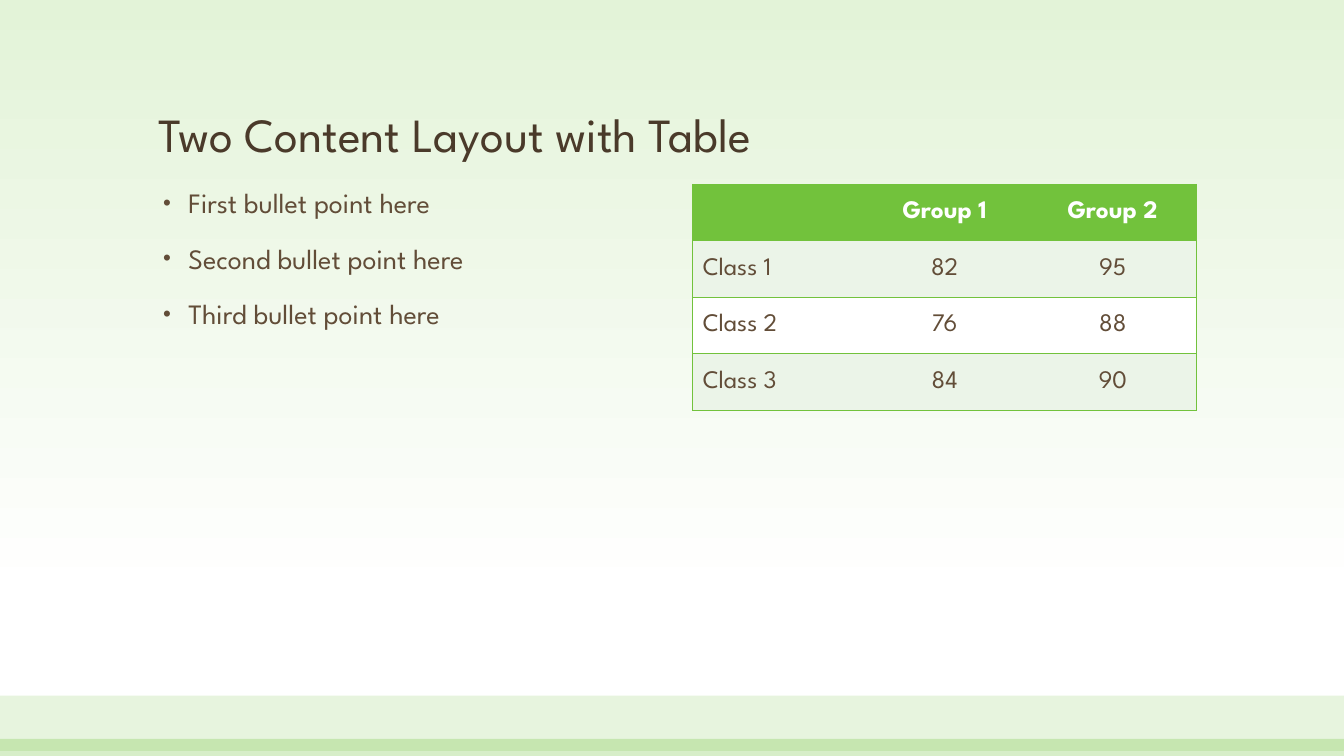
from dataclasses import dataclass

from lxml import etree
from pptx import Presentation
from pptx import util as u
from pptx.dml.color import RGBColor
from pptx.enum import shapes, text
from pptx.oxml import ns


@dataclass(frozen=True)
class Theme:
    font: str = "League Spartan"
    green: str = "72C23C"
    sky: str = "E3F3D8"
    band: str = "EBF4E8"
    white: str = "FFFFFF"
    title: str = "4A3A2A"
    body: str = "624D38"
    title_size: int = 34
    body_size: int = 20
    table_size: int = 18
    border: int = 1


def rgb(color):
    return RGBColor.from_string(color)


class Deck:
    def __init__(self, theme):
        self.theme = theme
        self.prs = Presentation()
        self.prs.slide_width = u.Inches(13.33)
        self.prs.slide_height = u.Inches(7.5)
        self.s = self.prs.slides.add_slide(self.prs.slide_layouts[5])

    def format_runs(self, p, size, color, bold=False):
        for r in p.runs:
            r.font.name = self.theme.font
            r.font.size = u.Pt(size)
            r.font.bold = bold
            r.font.color.rgb = rgb(color)

    def background(self):
        fill = self.s.background.fill
        fill.gradient()
        fill.gradient_angle = 270
        stops = ((0, self.theme.sky), (0.79, self.theme.white))
        for stop, (position, color) in zip(fill.gradient_stops, stops):
            stop.position = position
            stop.color.rgb = rgb(color)

    def bar(self, top, height, opacity):
        sp = self.s.shapes.add_shape(
            shapes.MSO_SHAPE.RECTANGLE, 0, u.Inches(top),
            self.prs.slide_width, u.Inches(height))
        sp.shadow.inherit = False
        sp.line.fill.background()
        sp.fill.solid()
        sp.fill.fore_color.rgb = rgb(self.theme.green)
        color = sp._element.spPr.find(".//" + ns.qn("a:srgbClr"))
        etree.SubElement(color, ns.qn("a:alpha"), val=str(opacity * 1000))

    def title(self, wording, left, top, width, height):
        sp = self.s.shapes.title
        sp.left, sp.top = u.Inches(left), u.Inches(top)
        sp.width, sp.height = u.Inches(width), u.Inches(height)
        tf = sp.text_frame
        tf.text = wording
        tf.auto_size = text.MSO_AUTO_SIZE.NONE
        tf.vertical_anchor = text.MSO_ANCHOR.BOTTOM
        p = tf.paragraphs[0]
        p.alignment = text.PP_ALIGN.LEFT
        p.line_spacing = 0.9
        self.format_runs(p, self.theme.title_size, self.theme.title)

    def bullets(self, items, left, top, width, height):
        sp = self.s.shapes.add_textbox(
            u.Inches(left), u.Inches(top), u.Inches(width), u.Inches(height))
        tf = sp.text_frame
        tf.word_wrap = True
        tf.text = "\n".join(items)
        for p in tf.paragraphs:
            p.line_spacing = 0.9
            p.space_before = u.Pt(18)
            pPr = p._p.get_or_add_pPr()
            pPr.set("marL", str(u.Inches(0.3)))
            pPr.set("indent", str(u.Inches(-0.25)))
            etree.SubElement(pPr, ns.qn("a:buSzPct"), val="80000")
            etree.SubElement(pPr, ns.qn("a:buFont"), typeface="Arial")
            etree.SubElement(pPr, ns.qn("a:buChar"), char="•")
            self.format_runs(p, self.theme.body_size, self.theme.body)

    def borders(self, cell, visible):
        tcPr = cell._tc.get_or_add_tcPr()
        for i, side in enumerate("LRTB"):
            ln = etree.Element(ns.qn("a:ln" + side),
                               w=str(u.Pt(self.theme.border)))
            if side in visible:
                fill = etree.SubElement(ln, ns.qn("a:solidFill"))
                etree.SubElement(fill, ns.qn("a:srgbClr"),
                                 val=self.theme.green)
            else:
                etree.SubElement(ln, ns.qn("a:noFill"))
            tcPr.insert(i, ln)

    def table(self, rows, left, top, width, row_height):
        n_rows, n_cols = len(rows), len(rows[0])
        table = self.s.shapes.add_table(
            n_rows, n_cols, u.Inches(left), u.Inches(top),
            u.Inches(width), u.Inches(row_height * n_rows)).table
        table.first_row = table.horz_banding = False
        for i, row in enumerate(rows):
            for j, value in enumerate(row):
                self.cell(table.cell(i, j), value, i, j, n_cols)

    def cell(self, cell, value, i, j, n_cols):
        t = self.theme
        header = i == 0
        cell.text = value
        cell.vertical_anchor = text.MSO_ANCHOR.MIDDLE
        cell.fill.solid()
        fill = t.green if header else t.band if i % 2 else t.white
        cell.fill.fore_color.rgb = rgb(fill)
        p = cell.text_frame.paragraphs[0]
        p.alignment = text.PP_ALIGN.CENTER if j else text.PP_ALIGN.LEFT
        self.format_runs(p, t.table_size, t.white if header else t.body,
                         header)
        self.borders(cell, "TB" + "L" * (j == 0) + "R" * (j == n_cols - 1))


def main():
    deck = Deck(Theme())
    deck.background()
    deck.bar(6.9, 0.55, 17)
    deck.bar(7.33, 0.17, 28)
    deck.title("Two Content Layout with Table", 1.47, 0.48, 10.4, 1.19)
    deck.bullets(["First bullet point here", "Second bullet point here",
                  "Third bullet point here"], 1.47, 1.83, 5, 4.75)
    deck.table([["", "Group 1", "Group 2"],
                ["Class 1", "82", "95"],
                ["Class 2", "76", "88"],
                ["Class 3", "84", "90"]], 6.87, 1.83, 5, 0.56)
    deck.prs.save("out.pptx")


if __name__ == "__main__":
    main()
